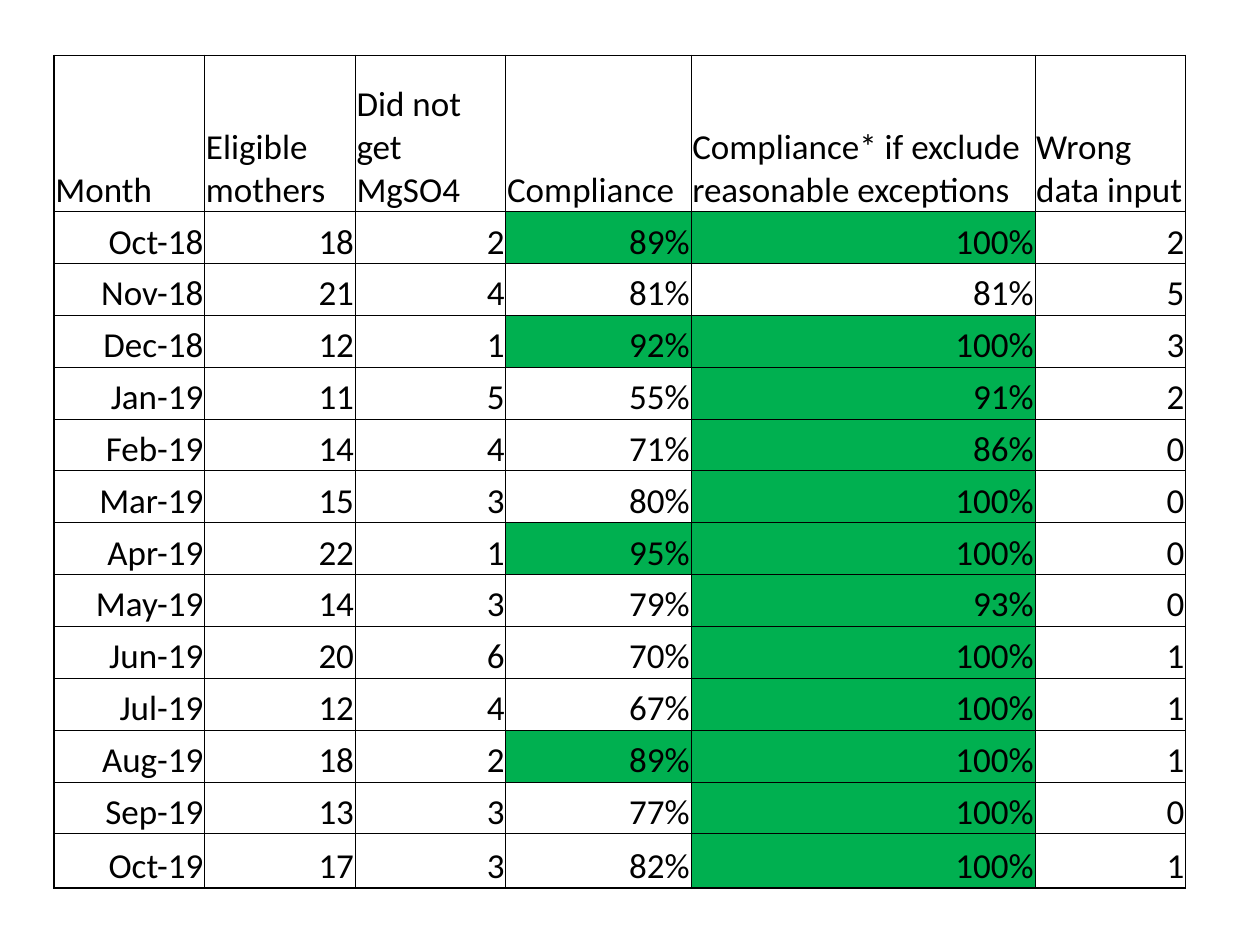
from dataclasses import dataclass

from lxml import etree
from pptx import Presentation
from pptx import util as u
from pptx.dml.color import RGBColor
from pptx.enum import text
from pptx.oxml.ns import qn
from pptx.util import Inches

COLORS = {"ink": "000000", "target_met": "00B050"}
TARGET = 85  # percent from which a compliance cell turns green
THIN, THICK = 0.5, 1  # border widths in points


@dataclass
class MonthResult:
    month: str
    eligible: int
    missed: int
    compliance: int
    adjusted: int
    wrong_input: int


HEADINGS = [
    "Month",
    "Eligible mothers",
    "Did not get MgSO4",
    "Compliance",
    "Compliance* if exclude reasonable exceptions",
    "Wrong data input",
]
RESULTS = [
    MonthResult("Oct-18", 18, 2, 89, 100, 2),
    MonthResult("Nov-18", 21, 4, 81, 81, 5),
    MonthResult("Dec-18", 12, 1, 92, 100, 3),
    MonthResult("Jan-19", 11, 5, 55, 91, 2),
    MonthResult("Feb-19", 14, 4, 71, 86, 0),
    MonthResult("Mar-19", 15, 3, 80, 100, 0),
    MonthResult("Apr-19", 22, 1, 95, 100, 0),
    MonthResult("May-19", 14, 3, 79, 93, 0),
    MonthResult("Jun-19", 20, 6, 70, 100, 1),
    MonthResult("Jul-19", 12, 4, 67, 100, 1),
    MonthResult("Aug-19", 18, 2, 89, 100, 1),
    MonthResult("Sep-19", 13, 3, 77, 100, 0),
    MonthResult("Oct-19", 17, 3, 82, 100, 1),
]

# Table geometry in inches: the remaining space is shared equally
WIDTH, HEIGHT = 8.98, 6.61
COMPLIANCE_W, ADJUSTED_W = 1.47, 2.73
HEADER_H, LAST_H = 1.24, 0.43
NARROW_W = (WIDTH - COMPLIANCE_W - ADJUSTED_W) / 4
MONTH_H = (HEIGHT - HEADER_H - LAST_H) / (len(RESULTS) - 1)
COLUMN_WIDTHS = [NARROW_W] * 3 + [COMPLIANCE_W, ADJUSTED_W, NARROW_W]
ROW_HEIGHTS = [HEADER_H] + [MONTH_H] * (len(RESULTS) - 1) + [LAST_H]


def set_borders(cell, widths: dict[str, float]) -> None:
    """Draw the borders; they must precede the fill in the cell properties."""
    properties = cell._tc.get_or_add_tcPr()
    for position, (side, points) in enumerate(widths.items()):
        line = etree.Element(qn(f"a:ln{side}"), w=str(u.Pt(points)))
        solid = etree.SubElement(line, qn("a:solidFill"))
        etree.SubElement(solid, qn("a:srgbClr"), val=COLORS["ink"])
        properties.insert(position, line)


def write_cell(cell, wording: str, align, green: bool) -> None:
    cell.text = wording
    cell.vertical_anchor = text.MSO_ANCHOR.BOTTOM
    cell.margin_left = cell.margin_right = cell.margin_top = Inches(0.01)
    cell.margin_bottom = 0
    paragraph = cell.text_frame.paragraphs[0]
    paragraph.alignment = align
    paragraph.font.name = "Calibri"
    paragraph.font.size = u.Pt(20)
    paragraph.font.color.rgb = RGBColor.from_string(COLORS["ink"])
    if green:
        cell.fill.solid()
        cell.fill.fore_color.rgb = RGBColor.from_string(COLORS["target_met"])
    else:
        cell.fill.background()


def add_compliance_table(slide) -> None:
    rows, columns = len(ROW_HEIGHTS), len(COLUMN_WIDTHS)
    table = slide.shapes.add_table(
        rows, columns, Inches(0.43), Inches(0.44), Inches(WIDTH), Inches(HEIGHT)
    ).table
    table.first_row = table.horz_banding = False
    for column, width in zip(table.columns, COLUMN_WIDTHS):
        column.width = Inches(width)
    for row, height in zip(table.rows, ROW_HEIGHTS):
        row.height = Inches(height)

    # Header row
    for c, heading in enumerate(HEADINGS):
        write_cell(table.cell(0, c), heading, text.PP_ALIGN.LEFT, False)

    # One row a month, green where compliance reaches the target
    for r, result in enumerate(RESULTS, start=1):
        entries = [
            (result.month, False),
            (str(result.eligible), False),
            (str(result.missed), False),
            (f"{result.compliance}%", result.compliance >= TARGET),
            (f"{result.adjusted}%", result.adjusted >= TARGET),
            (str(result.wrong_input), False),
        ]
        for c, (wording, green) in enumerate(entries):
            write_cell(table.cell(r, c), wording, text.PP_ALIGN.RIGHT, green)

    # Thin grid inside a thicker frame
    for r in range(rows):
        for c in range(columns):
            set_borders(table.cell(r, c), {
                "L": THICK if c == 0 else THIN,
                "R": THICK if c == columns - 1 else THIN,
                "T": THICK if r == 0 else THIN,
                "B": THICK if r == rows - 1 else THIN,
            })


def main() -> None:
    deck = Presentation()
    deck.slide_width, deck.slide_height = Inches(10), Inches(7.5)
    slide = deck.slides.add_slide(deck.slide_layouts[6])
    add_compliance_table(slide)
    deck.save("out.pptx")


if __name__ == "__main__":
    main()
